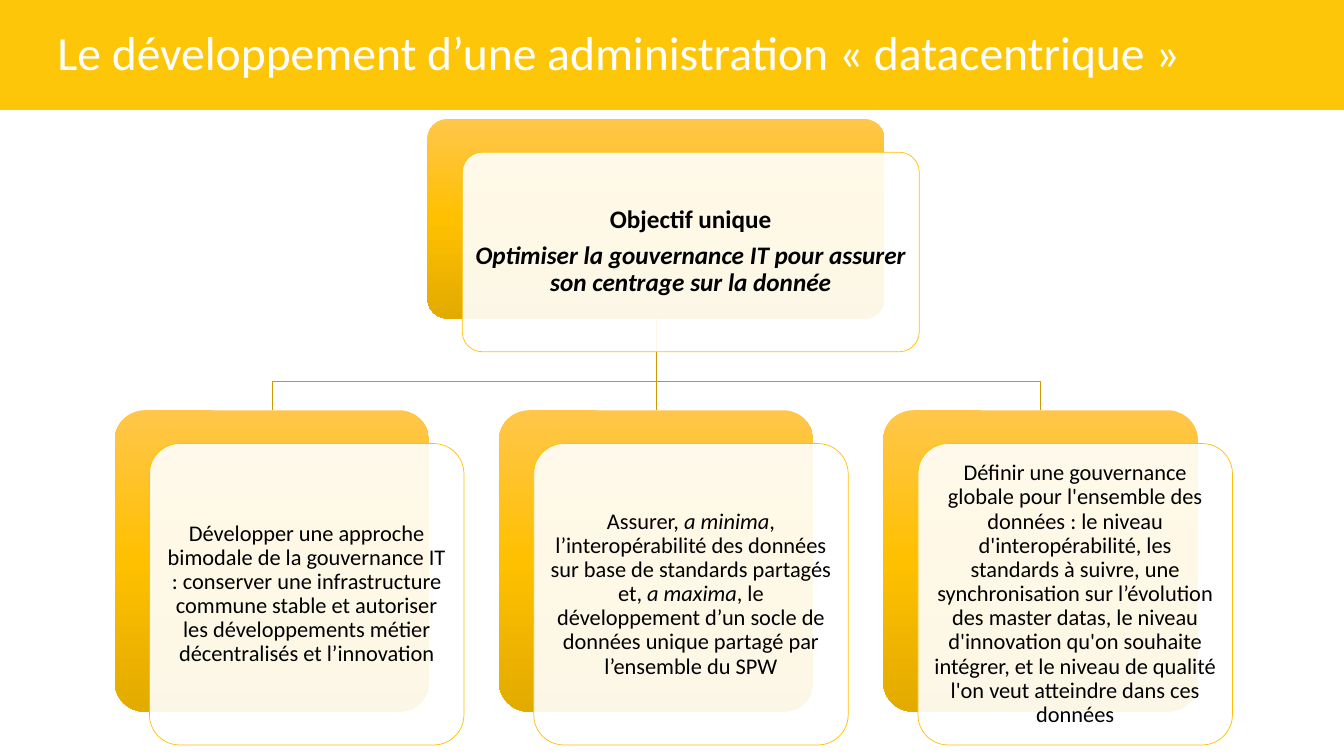
from lxml.etree import SubElement
from pptx import Presentation
from pptx.dml.color import RGBColor
from pptx.enum.shapes import MSO_CONNECTOR, MSO_SHAPE
from pptx.enum.text import MSO_ANCHOR, PP_ALIGN
from pptx.oxml.ns import qn
from pptx.util import Inches, Pt


def color(hex_code):
    return RGBColor.from_string(hex_code)


def write(shape, paragraphs, size, ink="000000", bold=False,
          align=PP_ALIGN.CENTER, inset=0.07, left_inset=0.07):
    """Fill a shape with paragraphs, each a list of (text, italic) runs."""
    frame = shape.text_frame
    frame.word_wrap = True
    frame.vertical_anchor = MSO_ANCHOR.MIDDLE
    frame.margin_left = Inches(left_inset)
    frame.margin_right = frame.margin_top = frame.margin_bottom = Inches(inset)
    for number, runs in enumerate(paragraphs):
        paragraph = frame.add_paragraph() if number else frame.paragraphs[0]
        paragraph.alignment = align
        paragraph.line_spacing = 0.9
        paragraph.space_after = Pt(size * 0.35)
        for text, italic in runs:
            run = paragraph.add_run()
            run.text = text
            run.font.name = "Calibri"
            run.font.size = Pt(size)
            run.font.bold = bold
            run.font.italic = italic
            run.font.color.rgb = color(ink)


deck = Presentation()
deck.slide_width, deck.slide_height = Inches(13.33), Inches(7.5)
slide = deck.slides.add_slide(deck.slide_layouts[6])
shapes = slide.shapes

# Lengths are percentages of the slide's width and height
X, Y = deck.slide_width / 100, deck.slide_height / 100
SHIFT_X, SHIFT_Y = 2.59, 4.4
GOAL_LEFT, GOAL_TOP, GOAL_WIDTH, GOAL_HEIGHT = 31.81, 15.73, 34, 26.4
AXIS_LEFT, AXIS_TOP, AXIS_WIDTH, AXIS_HEIGHT = 8.53, 54.27, 23.4, 39.87
AXIS_PITCH = 28.59
BRANCH_Y = 50.4

# Title band
band = shapes.add_shape(MSO_SHAPE.RECTANGLE, 0, 0, deck.slide_width, int(14.53 * Y))
band.shadow.inherit = False
band.fill.solid()
band.fill.fore_color.rgb = color("FEC609")
band.line.fill.background()
write(band, [[("Le développement d’une administration « datacentrique »", False)]],
      size=34, ink="FFFFFF", align=PP_ALIGN.LEFT, inset=0.09, left_inset=0.57)

# Content: the goal, then its three axes
goal = [[("Objectif unique", False)],
        [("Optimiser la gouvernance IT pour assurer son centrage sur la donnée", True)]]
axes = [
    [[("Développer une approche bimodale de la gouvernance IT : conserver une "
       "infrastructure commune stable et autoriser les développements métier "
       "décentralisés et l’innovation", False)]],
    [[("Assurer, ", False), ("a minima", True),
      (", l’interopérabilité des données sur base de standards partagés et, ", False),
      ("a maxima", True),
      (", le développement d’un socle de données unique partagé par l’ensemble "
       "du SPW", False)]],
    [[("Définir une gouvernance globale pour l'ensemble des données : le niveau "
       "d'interopérabilité, les standards à suivre, une synchronisation sur "
       "l’évolution des master datas, le niveau d'innovation qu'on souhaite "
       "intégrer, et le niveau de qualité l'on veut atteindre dans ces données",
       False)]],
]
cards = [(GOAL_LEFT, GOAL_TOP, GOAL_WIDTH, GOAL_HEIGHT, 18, True, goal)]
for column, axis in enumerate(axes):
    cards.append((AXIS_LEFT + column * AXIS_PITCH, AXIS_TOP,
                  AXIS_WIDTH, AXIS_HEIGHT, 16, False, axis))

# Branches from the goal to each axis, behind the cards
trunk_x = int((GOAL_LEFT + GOAL_WIDTH / 2) * X)
trunk_y, branch_y, axis_y = [
    int(y * Y) for y in (GOAL_TOP + GOAL_HEIGHT, BRANCH_Y, AXIS_TOP)]
for column in (2, 1, 0):
    if column == 1:
        branch = shapes.add_connector(
            MSO_CONNECTOR.STRAIGHT, trunk_x, trunk_y, trunk_x, axis_y)
        SubElement(branch._element.spPr, qn("a:effectLst"))
    else:
        axis_x = int((AXIS_LEFT + column * AXIS_PITCH + AXIS_WIDTH / 2) * X)
        outline = shapes.build_freeform(trunk_x, trunk_y)
        outline.add_line_segments(
            [(trunk_x, branch_y), (axis_x, branch_y), (axis_x, axis_y)], close=False)
        branch = outline.convert_to_shape()
        branch.fill.background()
        branch.shadow.inherit = False
    branch.line.color.rgb = color("CC9A00")
    branch.line.width = Pt(0.5)

# Cards: a gradient back and a translucent panel shifted over it
for left, top, width, height, size, bold, paragraphs in cards:
    back, panel = [
        shapes.add_shape(MSO_SHAPE.ROUNDED_RECTANGLE,
                         int((left + step * SHIFT_X) * X), int((top + step * SHIFT_Y) * Y),
                         int(width * X), int(height * Y))
        for step in (0, 1)]
    for layer in (back, panel):
        layer.adjustments[0] = 0.1
        layer.shadow.inherit = False

    back.line.fill.background()
    back.fill.gradient()
    back.fill.gradient_angle = 270
    stops = back._element.spPr.find(qn("a:gradFill")).find(qn("a:gsLst"))
    for stop in list(stops):
        stops.remove(stop)
    for percent, shade in ((0, "FFC64B"), (50, "FFC000"), (100, "E3AB00")):
        stop = SubElement(stops, qn("a:gs"), pos=str(percent * 1000))
        SubElement(stop, qn("a:srgbClr"), val=shade)

    panel.fill.solid()
    panel.fill.fore_color.rgb = color("FFFFFF")
    white = panel._element.spPr.find(qn("a:solidFill")).find(qn("a:srgbClr"))
    SubElement(white, qn("a:alpha"), val="90000")
    panel.line.color.rgb = color("FFC000")
    panel.line.width = Pt(0.5)
    write(panel, paragraphs, size=size, bold=bold)

deck.save("out.pptx")
